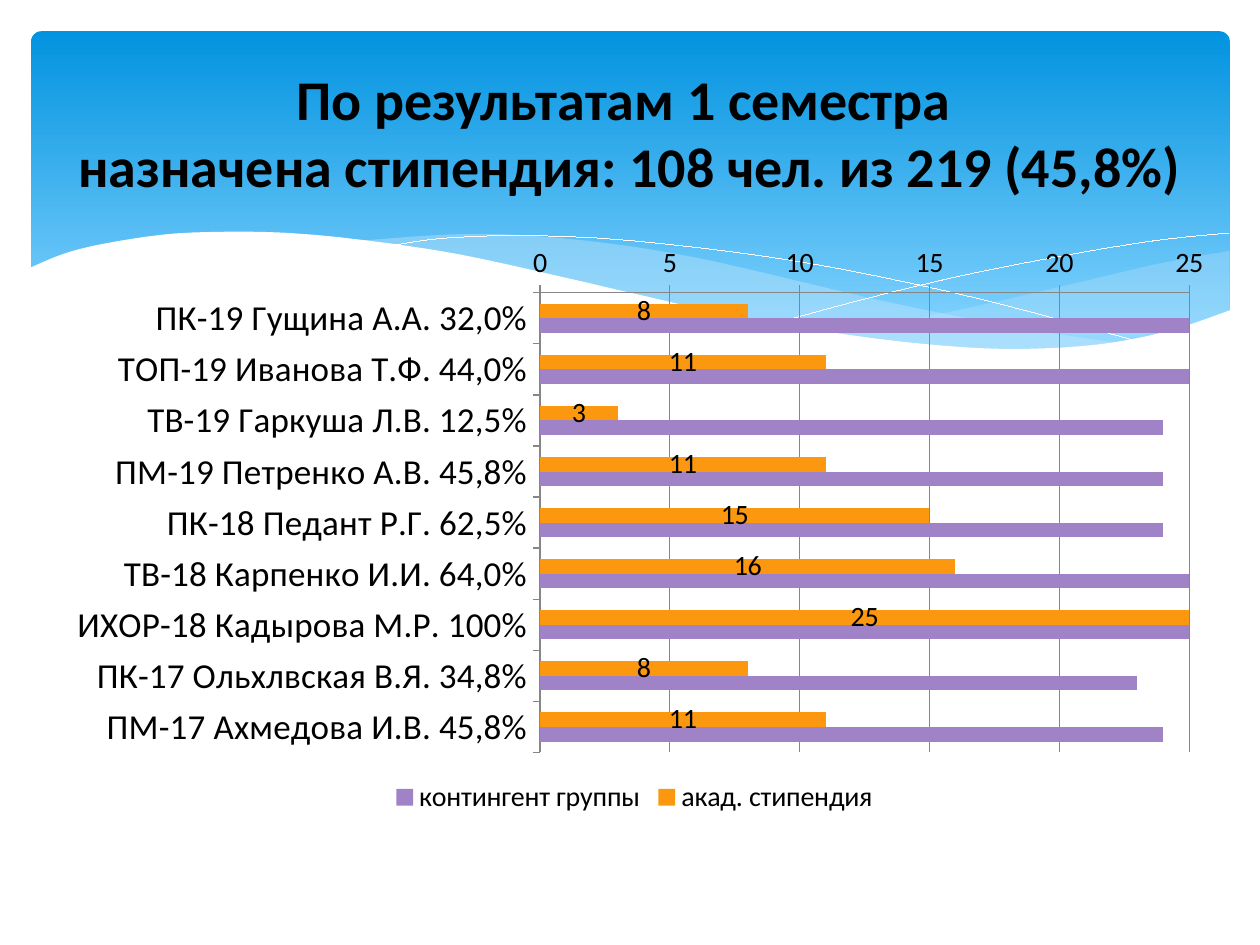
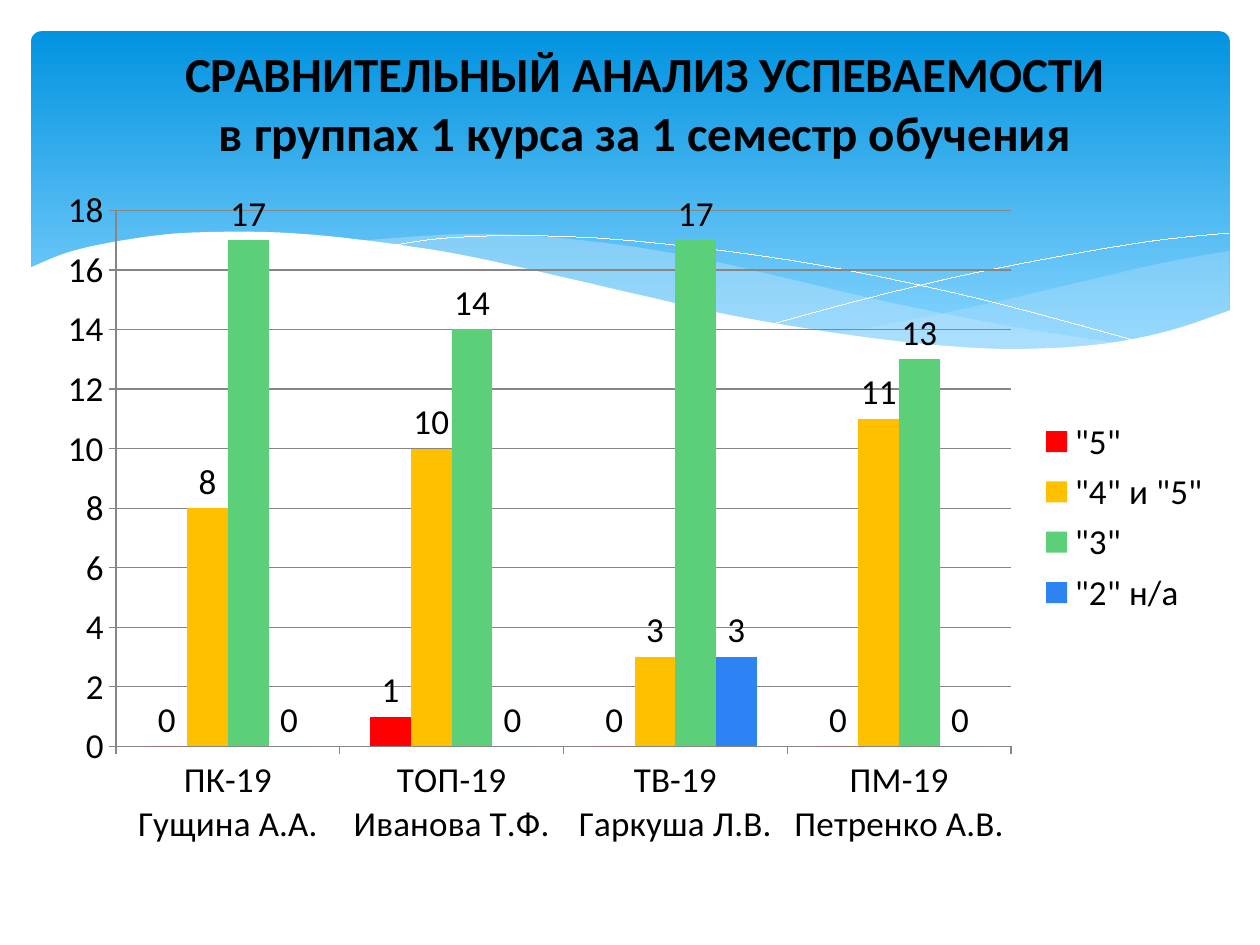
from pptx import Presentation
from pptx.chart.data import CategoryChartData
from pptx.dml.color import RGBColor
from pptx.enum.chart import XL_CHART_TYPE, XL_LABEL_POSITION, XL_LEGEND_POSITION, XL_TICK_MARK
from pptx.enum.shapes import MSO_SHAPE
from pptx.enum.text import MSO_ANCHOR, MSO_AUTO_SIZE, PP_ALIGN
from pptx.oxml.ns import qn
from pptx.util import Cm, Pt
from lxml import etree

BAR, COLUMN = XL_CHART_TYPE.BAR_CLUSTERED, XL_CHART_TYPE.COLUMN_CLUSTERED
BOTTOM, RIGHT = XL_LEGEND_POSITION.BOTTOM, XL_LEGEND_POSITION.RIGHT
INNER, OUTER = XL_LABEL_POSITION.CENTER, XL_LABEL_POSITION.OUTSIDE_END
TICK = XL_TICK_MARK.OUTSIDE
ROUND = MSO_SHAPE.ROUNDED_RECTANGLE
MIDDLE, CENTER = MSO_ANCHOR.MIDDLE, PP_ALIGN.CENTER
NO_FIT = MSO_AUTO_SIZE.NONE

FONT = "Calibri"
BLACK, WHITE, GRID = "000000", "FFFFFF", "868686"
SKY, PALE, MIST = "0293E0", "83D3FE", "C6E7FC"
INCH = Cm(2.54)
FINE = 1000  # drawing units per inch

# Knots of the header waves, in inches
EAST_TOP = [(9.76, 1.99), (9.21, 2.09), (8.61, 2.23), (7.79, 2.42), (7.06, 2.57), (6.61, 2.65)]
EAST_LOW = [(6.61, 2.65), (7.18, 2.72), (7.69, 2.77), (8.14, 2.78), (8.63, 2.75),
            (9.13, 2.67), (9.49, 2.57), (9.76, 2.47)]
MID_TOP = [(8.93, 2.73), (8.07, 2.6), (7.06, 2.4), (6.29, 2.22), (5.55, 2.05), (4.89, 1.94),
           (4.2, 1.87), (3.61, 1.86), (2.86, 1.91)]
MID_LOW = [(2.86, 1.91), (3.62, 2.03), (4.49, 2.22), (5.3, 2.4), (6.18, 2.58), (6.95, 2.7),
           (7.61, 2.77), (8.18, 2.78), (8.93, 2.73)]
FALL = [(3.09, 1.95), (3.53, 1.89), (4.16, 1.87), (4.89, 1.9), (5.82, 2), (6.65, 2.13),
        (7.6, 2.33), (8.31, 2.51), (9.07, 2.72)]
RISE = [(6.13, 2.57), (6.95, 2.35), (7.76, 2.16), (8.66, 1.99), (9.24, 1.9), (9.75, 1.85)]
SHORE = [(9.77, 2.46), (9.3, 2.62), (8.75, 2.73), (8.09, 2.77), (7.44, 2.74), (6.68, 2.65),
         (5.79, 2.5), (5.03, 2.33), (4.47, 2.2), (3.65, 2.02), (2.92, 1.91), (2.3, 1.85),
         (1.77, 1.84), (1.32, 1.86), (0.85, 1.93), (0.52, 2.01), (0.23, 2.13)]


def hue(code):
    return RGBColor.from_string(code)


def curve(knots, steps=6):
    """Points of a smooth curve through the knots."""
    ends = [knots[0], *knots, knots[-1]]
    dots = [knots[0]]
    for a, b, c, d in zip(ends, ends[1:], ends[2:], ends[3:]):
        for step in range(1, steps + 1):
            t = step / steps
            dots.append(tuple(
                q + t * (r - p) / 2 + t * t * (2 * p - 5 * q + 4 * r - s) / 2
                + t ** 3 * (3 * q - p - 3 * r + s) / 2
                for p, q, r, s in zip(a, b, c, d)))
    return dots


def outline(slide, dots, close):
    grid = [(round(x * FINE), round(y * FINE)) for x, y in dots]
    pen = slide.shapes.build_freeform(*grid[0], scale=INCH / FINE)
    pen.add_line_segments(grid[1:], close=close)
    shape = pen.convert_to_shape()
    shape.shadow.inherit = False
    return shape


def wave(slide, dots, color, alpha=100):
    shape = outline(slide, dots, True)
    shape.line.fill.background()
    shape.fill.solid()
    shape.fill.fore_color.rgb = hue(color)
    if alpha < 100:
        tint = shape.element.spPr.find(qn("a:solidFill"))[0]
        etree.SubElement(tint, qn("a:alpha")).set("val", str(alpha * 1000))


def thread(slide, knots):
    shape = outline(slide, curve(knots), False)
    shape.fill.background()
    shape.line.color.rgb = hue(WHITE)
    shape.line.width = Pt(0.01)


def band(slide):
    shape = slide.shapes.add_shape(ROUND, Cm(0.63), Cm(0.63), Cm(24.16), Cm(6.86))
    shape.adjustments[0] = 0.03
    shape.shadow.inherit = False
    shape.line.fill.background()
    shape.fill.gradient()
    shape.fill.gradient_angle = 270
    for stop, color, place in zip(shape.fill.gradient_stops, (SKY, PALE), (0, 0.9)):
        stop.color.rgb = hue(color)
        stop.position = place


def header(slide, layout):
    """Draw the header and hand it to the layout, so all slides share it."""
    band(slide)
    wave(slide, curve(EAST_TOP) + curve(EAST_LOW), MIST, 29)
    wave(slide, curve(MID_TOP) + curve(MID_LOW), MIST, 40)
    thread(slide, FALL)
    thread(slide, RISE)
    wave(slide, curve(SHORE) + [(0.23, 3.29), (9.77, 3.29)], WHITE)

    title, *rest = layout.placeholders
    tree = title.element.getparent()
    for spare in rest:
        tree.remove(spare.element)
    parts = [s for s in slide.shapes if not s.is_placeholder]
    for part in parts:
        title.element.addprevious(part.element)


def head(slide, lines, size, box):
    title = slide.shapes.title
    title.left, title.top, title.width, title.height = map(Cm, box)
    frame = title.text_frame
    frame.word_wrap = True
    frame.auto_size = NO_FIT
    frame.vertical_anchor = MIDDLE
    frame.margin_left = frame.margin_right = Cm(0.2)
    frame.margin_bottom = Pt(1.2 * size) + Cm(0.13)  # lifts the text by half a line
    for i, line in enumerate(lines):
        par = frame.add_paragraph() if i else frame.paragraphs[0]
        par.alignment = CENTER
        par.space_before = Pt(0)
        run = par.add_run()
        run.text = line
        font = run.font
        font.name, font.size, font.bold = FONT, Pt(size), True
        font.color.rgb = hue(BLACK)


def style(font, size):
    font.name, font.size, font.bold = FONT, Pt(size), False
    font.color.rgb = hue(BLACK)


def rule(line):
    line.color.rgb = hue(GRID)
    line.width = Pt(0.75)


def place_plot(chart, frame):
    """Fix the inner plot area, in parts of the chart's size."""
    area = chart.plots[0]._element.getparent()
    for old in area.findall(qn("c:layout")):
        area.remove(old)
    layout = etree.Element(qn("c:layout"))
    area.insert(0, layout)
    manual = etree.SubElement(layout, qn("c:manualLayout"))
    keys = ("layoutTarget", "xMode", "yMode", "x", "y", "w", "h")
    for key, val in zip(keys, ("inner", "edge", "edge", *frame)):
        etree.SubElement(manual, qn("c:" + key)).set("val", str(val))


def show_all(axis):
    """Label every category."""
    skip = etree.Element(qn("c:tickLblSkip"))
    skip.set("val", "1")
    axis._element.find(qn("c:noMultiLvlLbl")).addprevious(skip)


def graph(slide, kind, box, cats, rows, size, side, top, unit):
    """Rows hold name, colour, values and label place (None for no labels)."""
    data = CategoryChartData()
    data.categories = cats
    for name, _, vals, _ in rows:
        data.add_series(name, vals)
    chart = slide.shapes.add_chart(kind, *map(Cm, box), data).chart
    chart.has_title = False
    style(chart.font, size)
    chart.has_legend = True
    chart.legend.position = side
    chart.legend.include_in_layout = False

    for axis in (chart.category_axis, chart.value_axis):
        axis.major_tick_mark = TICK
        rule(axis.format.line)
    show_all(chart.category_axis)
    scale = chart.value_axis
    scale.minimum_scale, scale.maximum_scale, scale.major_unit = 0, top, unit
    scale.has_major_gridlines = True
    rule(scale.major_gridlines.format.line)

    plot = chart.plots[0]
    plot.vary_by_categories = False
    plot.gap_width, plot.overlap = 150, 0
    for series, (_, color, _, place) in zip(plot.series, rows):
        series.format.fill.solid()
        series.format.fill.fore_color.rgb = hue(color)
        if place is not None:
            tags = series.data_labels
            tags.show_value = True
            tags.position = place
            style(tags.font, size)
    return chart


def grants(slide):
    head(slide, ["По результатам 1 семестра ",
                 "назначена стипендия: 108 чел. из 219 (45,8%)"],
         32, (1.27, 0.94, 22.86, 4.78))
    cats = ["ПК-19 Гущина А.А. 32,0%", "ТОП-19 Иванова Т.Ф. 44,0%",
            "ТВ-19 Гаркуша Л.В. 12,5%", "ПМ-19 Петренко А.В. 45,8%",
            "ПК-18 Педант Р.Г. 62,5%", "ТВ-18 Карпенко И.И. 64,0%",
            "ИХОР-18 Кадырова М.Р. 100%", "ПК-17 Ольхлвская В.Я. 34,8%",
            "ПМ-17 Ахмедова И.В. 45,8%"]
    rows = [("акад. стипендия", "FC9710", (8, 11, 3, 11, 15, 16, 25, 8, 11), INNER),
            ("контингент группы", "A083C7", (25, 25, 24, 24, 24, 25, 25, 23, 24), None)]
    chart = graph(slide, BAR, (0.89, 4.72, 23.8, 11.81), cats, rows, 16, BOTTOM, 25, 5)
    place_plot(chart, (0.42, 0.1, 0.55, 0.785))
    chart.category_axis.reverse_order = True
    style(chart.category_axis.tick_labels.font, 20)


def marks(slide):
    head(slide, ["СРАВНИТЕЛЬНЫЙ АНАЛИЗ УСПЕВАЕМОСТИ",
                 "в группах 1 курса за 1 семестр обучения"],
         28, (1.3, 0.91, 23.39, 3.48))
    cats = ["ПК-19\nГущина А.А.", "ТОП-19\nИванова Т.Ф.",
            "ТВ-19\nГаркуша Л.В.", "ПМ-19\nПетренко А.В."]
    rows = [('"5"', "FF0000", (0, 1, 0, 0), OUTER),
            ('"4" и "5"', "FFC000", (8, 10, 3, 11), OUTER),
            ('"3"', "5BD078", (17, 14, 17, 13), OUTER),
            ('"2" н/а', "2D83F4", (0, 0, 3, 0), OUTER)]
    graph(slide, COLUMN, (0.89, 3.53, 23.8, 13.79), cats, rows, 20, RIGHT, 18, 2)


def main():
    deck = Presentation()
    deck.slide_width, deck.slide_height = Cm(25.4), Cm(19.05)
    layout = deck.slide_layouts[5]  # title only
    first, second = [deck.slides.add_slide(layout) for _ in range(2)]
    header(first, layout)
    grants(first)
    marks(second)
    deck.save("out.pptx")


if __name__ == "__main__":
    main()
